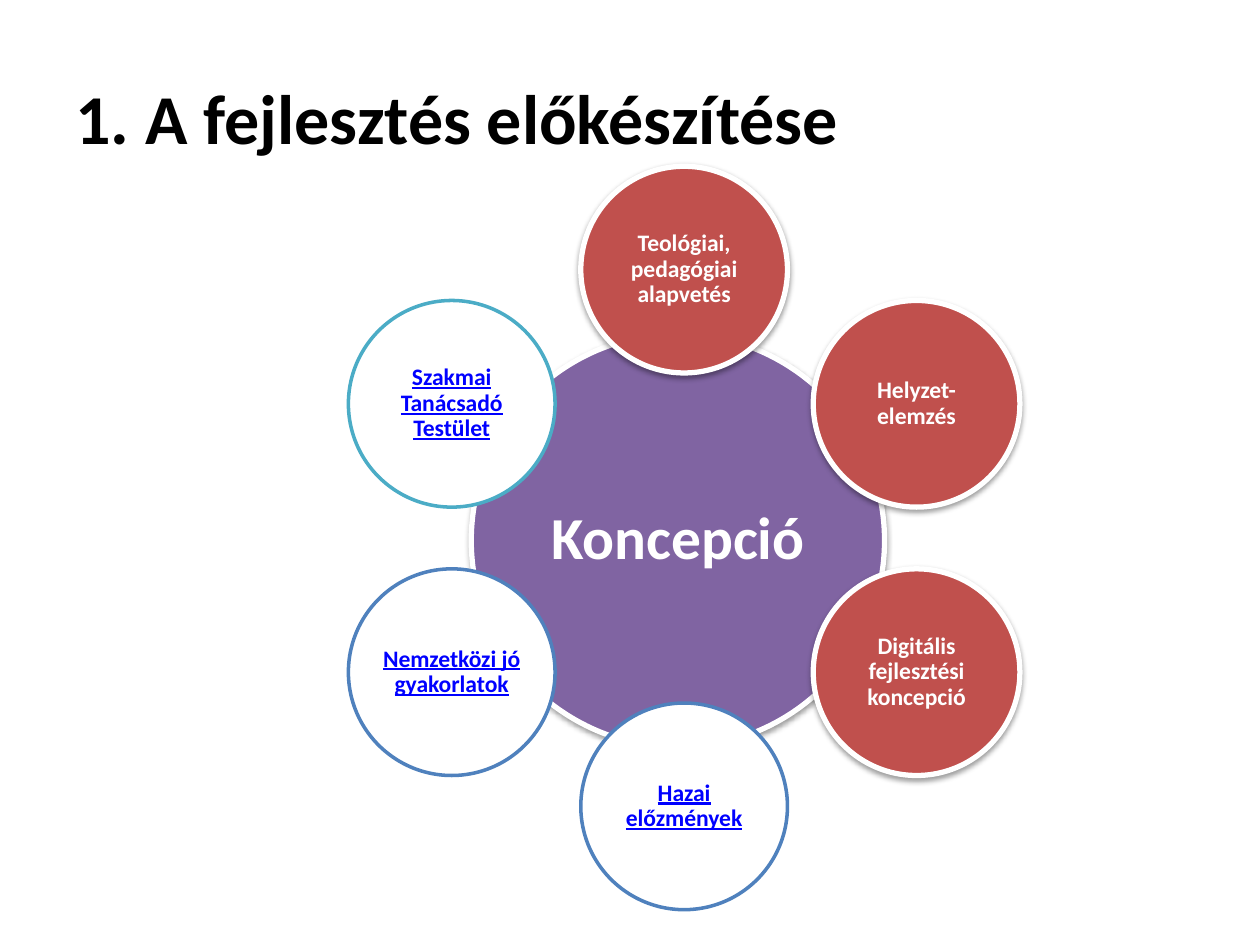
import math

import lxml.etree
import pptx
import pptx.dml.color
import pptx.enum.shapes
import pptx.enum.text
import pptx.oxml.ns
import pptx.util
from pptx.util import Inches

FONT = "Calibri"
COLORS = {
    "black": "000000",
    "white": "FFFFFF",
    "purple": "8064A2",
    "red": "C0504D",
    "blue": "4F81BD",
    "teal": "4BACC6",
    "link": "0000FF",
}
CENTER_X, CENTER_Y = 5.43, 4.27
ORBIT_RADIUS = 2.13
SATELLITE_SIZE = 1.64
SATELLITE_TEXT_SIZE = 1.16

# Clockwise from the top: text, fill, outline, linked
SATELLITES = [
    ("Teológiai, pedagógiai alapvetés", "red", "white", False),
    ("Helyzet-elemzés", "red", "white", False),
    ("Digitális fejlesztési koncepció", "red", "white", False),
    ("Hazai előzmények", "white", "blue", True),
    ("Nemzetközi jó gyakorlatok", "white", "blue", True),
    ("Szakmai Tanácsadó Testület", "white", "teal", True),
]


def rgb(name):
    return pptx.dml.color.RGBColor.from_string(COLORS[name])


def add_shadow(shape):
    """Add a soft shadow just below the shape."""
    qn = pptx.oxml.ns.qn
    effects = shape._element.spPr.find(qn("a:effectLst"))
    shadow = lxml.etree.SubElement(
        effects, qn("a:outerShdw"), blurRad=str(pptx.util.Pt(3.1)),
        dist=str(pptx.util.Pt(1.6)), dir="5400000", rotWithShape="0")
    color = lxml.etree.SubElement(shadow, qn("a:srgbClr"), val=COLORS["black"])
    lxml.etree.SubElement(color, qn("a:alpha"), val="38000")


def add_circle(slide, x, y, size, fill, outline, width, shadow):
    """Add a circle centred on x, y."""
    shape = slide.shapes.add_shape(
        pptx.enum.shapes.MSO_SHAPE.OVAL, Inches(x - size / 2),
        Inches(y - size / 2), Inches(size), Inches(size))
    shape.fill.solid()
    shape.fill.fore_color.rgb = rgb(fill)
    shape.line.color.rgb = rgb(outline)
    shape.line.width = pptx.util.Pt(width)
    shape.shadow.inherit = False
    if shadow:
        add_shadow(shape)


def add_text(slide, box, text, size, color, underline=False):
    """Add bold text, vertically centred in box (left, top, width, height)."""
    shape = slide.shapes.add_textbox(*map(Inches, box))
    frame = shape.text_frame
    frame.word_wrap = True
    frame.vertical_anchor = pptx.enum.text.MSO_ANCHOR.MIDDLE
    run = frame.paragraphs[0].add_run()
    run.text = text
    font = run.font
    font.name, font.size, font.bold = FONT, pptx.util.Pt(size), True
    font.color.rgb = rgb(color)
    if underline:
        font.underline = True
    return frame


def add_label(slide, x, y, box_size, inset, text, size, color, underline=False):
    """Add centred text in a square box centred on x, y."""
    box = (x - box_size / 2, y - box_size / 2, box_size, box_size)
    frame = add_text(slide, box, text, size, color, underline)
    frame.margin_left = frame.margin_right = Inches(inset)
    frame.margin_top = frame.margin_bottom = Inches(inset)
    paragraph = frame.paragraphs[0]
    paragraph.alignment = pptx.enum.text.PP_ALIGN.CENTER
    paragraph.line_spacing = 0.9


def add_satellites(slide):
    for index, (text, fill, outline, linked) in enumerate(SATELLITES):
        angle = math.tau * index / len(SATELLITES)
        x = CENTER_X + ORBIT_RADIUS * math.sin(angle)
        y = CENTER_Y - ORBIT_RADIUS * math.cos(angle)
        add_circle(slide, x, y, SATELLITE_SIZE, fill, outline,
                   width=2 if linked else 3, shadow=not linked)
        add_label(slide, x, y, SATELLITE_TEXT_SIZE, 0.02, text, 13.5,
                  "link" if linked else "white", linked)


def main():
    presentation = pptx.Presentation()
    presentation.slide_width = Inches(10)
    presentation.slide_height = Inches(7.5)
    slide = presentation.slides.add_slide(presentation.slide_layouts[6])
    add_text(slide, (0.5, 0.3, 9, 1.25), "1. A fejlesztés előkészítése",
             40, "black")
    hub_x, hub_y = 5.38, 4.29
    add_circle(slide, hub_x, hub_y, 3.28, "purple", "white", 3, True)
    add_label(slide, hub_x, hub_y, 2.32, 0.05, "Koncepció", 34, "white")
    add_satellites(slide)
    presentation.save("out.pptx")


if __name__ == "__main__":
    main()
